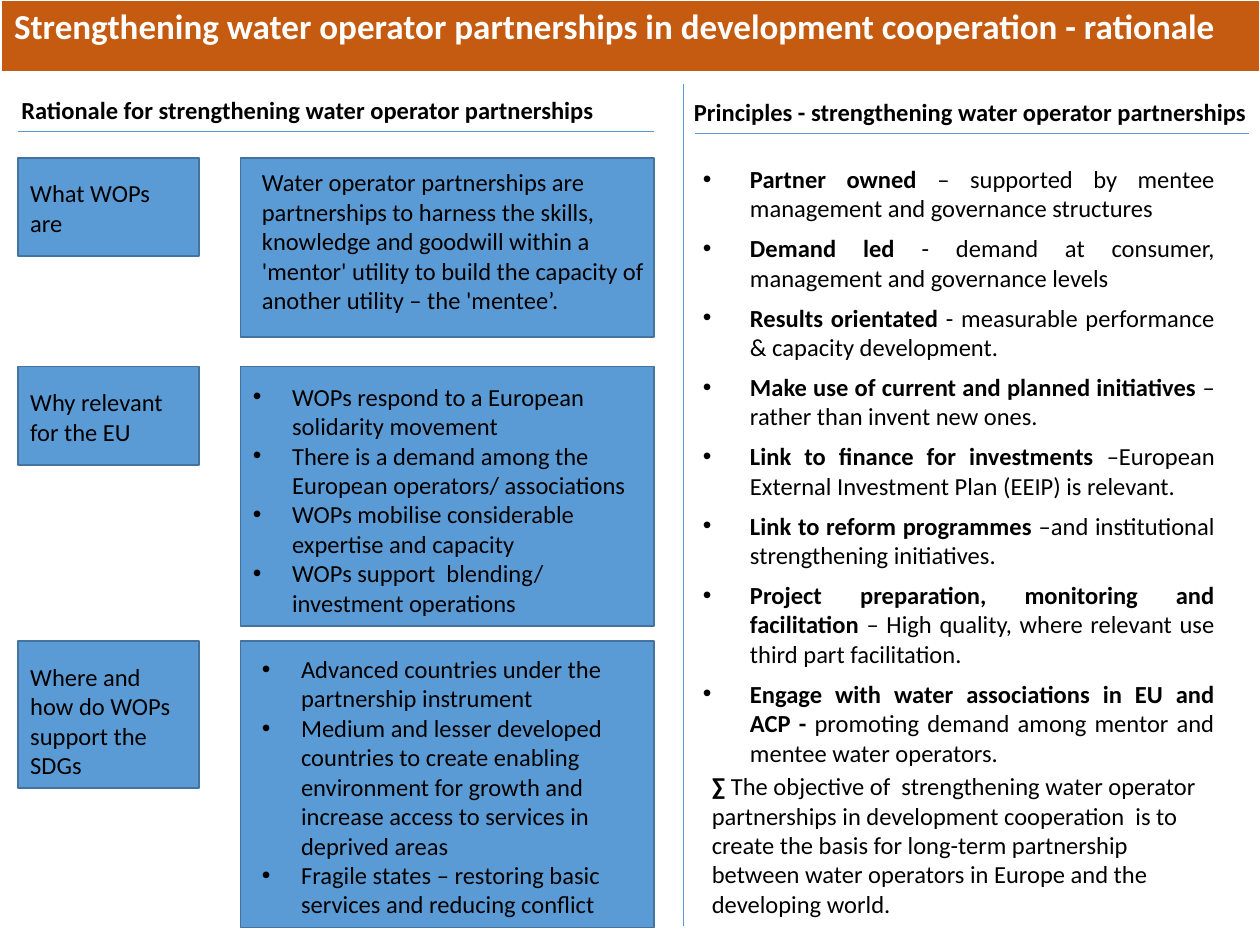
from dataclasses import dataclass
from typing import Optional

from lxml import etree
from pptx import Presentation
from pptx import util as u
from pptx.dml.color import RGBColor
from pptx.enum import shapes, text
from pptx.oxml import ns

BLUE, EDGE, ORANGE, WHITE, BLACK = "5B9BD5", "43739E", "C55A11", "FFFFFF", "000000"
FONT = "Calibri"


@dataclass
class Frame:
    """A place on the page, in centimetres."""
    left: float
    top: float
    width: float
    height: float

    def lengths(self) -> list[u.Length]:
        return [u.Cm(v) for v in (self.left, self.top, self.width, self.height)]


@dataclass
class Topic:
    """A label box and the answer box beside it."""
    top: float
    label: str
    label_height: float
    answer: list[str]
    answer_height: float
    text_frame: Frame
    indent: Optional[float] = None


@dataclass
class Principle:
    name: str
    detail: str


LABEL_LEFT, LABEL_WIDTH = 0.36, 3.66
ANSWER_LEFT, ANSWER_WIDTH = 4.85, 8.33

TOPICS = [
    Topic(3.18, "What WOPs are", 1.98,
          ["Water operator partnerships are partnerships to harness the skills, knowledge and "
           "goodwill within a 'mentor' utility to build the capacity of another utility – "
           "the 'mentee’."],
          3.61, Frame(5.03, 3.25, 8.33, 3.84)),
    Topic(7.39, "Why relevant for the EU", 1.98,
          ["WOPs respond to a European solidarity movement",
           "There is a demand among the European operators/ associations",
           "WOPs mobilise considerable expertise and capacity",
           "WOPs support  blending/ investment operations"],
          5.23, Frame(4.85, 7.57, 8.33, 5.05), 0.79),
    Topic(12.93, "Where and how do WOPs support the SDGs", 2.95,
          ["Advanced countries under the partnership instrument",
           "Medium and lesser developed countries to create enabling environment for growth "
           "and increase access to services in deprived areas",
           "Fragile states – restoring basic services and reducing conflict"],
          5.77, Frame(5.03, 13.06, 8.33, 5.64), 0.79),
]

PRINCIPLES = [
    Principle("Partner owned", " – supported by mentee management and governance structures "),
    Principle("Demand led", " - demand at consumer, management and governance levels"),
    Principle("Results orientated", " - measurable performance & capacity development."),
    Principle("Make use of current and planned initiatives", " –rather than invent new ones. "),
    Principle("Link to finance for investments",
              " –European External Investment Plan (EEIP) is relevant. "),
    Principle("Link to reform programmes", " –and institutional strengthening initiatives."),
    Principle("Project preparation, monitoring and facilitation",
              " – High quality, where relevant use third part facilitation."),
    Principle("Engage with water associations in EU and ACP - ",
              "promoting demand among mentor and mentee water operators. "),
]


def colour(value: str) -> RGBColor:
    return RGBColor.from_string(value)


def add_span(para, words: str, *, size: float = 14, bold: bool = False,
             fill: str = BLACK) -> None:
    span = para.add_run()
    span.text = words
    span.font.name, span.font.size, span.font.bold = FONT, u.Pt(size), bold
    span.font.color.rgb = colour(fill)


def add_bullet(para, indent: float) -> None:
    properties = para._p.get_or_add_pPr()
    properties.set("marL", str(u.Cm(indent)))
    properties.set("indent", str(-u.Cm(indent)))
    etree.SubElement(properties, ns.qn("a:buFont"), typeface="Arial")
    etree.SubElement(properties, ns.qn("a:buChar"), char="•")


def add_text(page, frame: Frame, paragraphs: list[list[tuple[str, bool]]], *,
             indent: Optional[float] = None, after: float = 0, align=None) -> None:
    """Each paragraph is a list of (words, bold) pairs."""
    body = page.shapes.add_textbox(*frame.lengths()).text_frame
    body.word_wrap = True
    body.auto_size = text.MSO_AUTO_SIZE.SHAPE_TO_FIT_TEXT
    for number, spans in enumerate(paragraphs):
        para = body.add_paragraph() if number else body.paragraphs[0]
        if indent:
            add_bullet(para, indent)
        para.space_after = u.Pt(after)
        para.alignment = align
        for words, bold in spans:
            add_span(para, words, bold=bold)


def add_box(page, frame: Frame) -> None:
    box = page.shapes.add_shape(shapes.MSO_SHAPE.RECTANGLE, *frame.lengths())
    box.shadow.inherit = False
    box.fill.solid()
    box.fill.fore_color.rgb = colour(BLUE)
    box.line.color.rgb = colour(EDGE)
    box.line.width = u.Pt(1)


def add_rule(page, x1: float, y1: float, x2: float, y2: float) -> None:
    rule = page.shapes.add_connector(shapes.MSO_CONNECTOR.STRAIGHT,
                                     *[u.Cm(v) for v in (x1, y1, x2, y2)])
    rule.line.color.rgb = colour(BLUE)
    rule.line.width = u.Pt(0.5)
    etree.SubElement(rule._element.spPr, ns.qn("a:effectLst"))


def add_banner(page, frame: Frame, title: str) -> None:
    table = page.shapes.add_table(1, 1, *frame.lengths()).table
    cell = table.cell(0, 0)
    properties = cell._tc.get_or_add_tcPr()
    for side, points in (("L", 1), ("R", 1), ("T", 1), ("B", 3)):
        border = etree.SubElement(properties, ns.qn(f"a:ln{side}"), w=str(u.Pt(points)))
        fill = etree.SubElement(border, ns.qn("a:solidFill"))
        etree.SubElement(fill, ns.qn("a:srgbClr"), val=WHITE)
    cell.fill.solid()
    cell.fill.fore_color.rgb = colour(ORANGE)
    add_span(cell.text_frame.paragraphs[0], title, size=20, bold=True, fill=WHITE)


def add_topic(page, topic: Topic) -> None:
    add_box(page, Frame(LABEL_LEFT, topic.top, LABEL_WIDTH, topic.label_height))
    add_text(page, Frame(LABEL_LEFT, topic.top + 0.29, 3.48, topic.label_height - 0.4),
             [[(topic.label, False)]])
    add_box(page, Frame(ANSWER_LEFT, topic.top, ANSWER_WIDTH, topic.answer_height))
    add_text(page, topic.text_frame, [[(words, False)] for words in topic.answer],
             indent=topic.indent)


def main() -> None:
    deck = Presentation()
    deck.slide_width, deck.slide_height = u.Cm(25.4), u.Cm(19.05)
    page = deck.slides.add_slide(deck.slide_layouts[6])

    # Title banner
    add_banner(page, Frame(0.03, 0, 25.37, 1.47),
               "Strengthening water operator partnerships in development cooperation - rationale")

    # Left column: rationale
    add_text(page, Frame(0.18, 1.8, 12.83, 0.86),
             [[("Rationale for strengthening water operator partnerships", True)]])
    add_rule(page, 0.36, 2.64, 13.18, 2.64)
    for topic in TOPICS:
        add_topic(page, topic)

    # Divider between the columns
    add_rule(page, 13.77, 1.7, 13.77, 18.67)

    # Right column: principles and objective
    add_text(page, Frame(13.74, 1.83, 12.83, 0.86),
             [[("Principles - strengthening water operator partnerships", True)]])
    add_rule(page, 14.02, 2.69, 25.17, 2.69)
    add_text(page, Frame(13.92, 3.18, 10.82, 12.52),
             [[(item.name, True), (item.detail, False)] for item in PRINCIPLES],
             indent=0.95, after=6, align=text.PP_ALIGN.JUSTIFY)
    add_text(page, Frame(14.1, 15.42, 10.54, 3.25),
             [[("∑", True),
               (" The objective of  strengthening water operator partnerships in development "
                "cooperation  is to create the basis for long-term partnership between water "
                "operators in Europe and the developing world.", False)]], after=6)

    deck.save("out.pptx")


if __name__ == "__main__":
    main()
